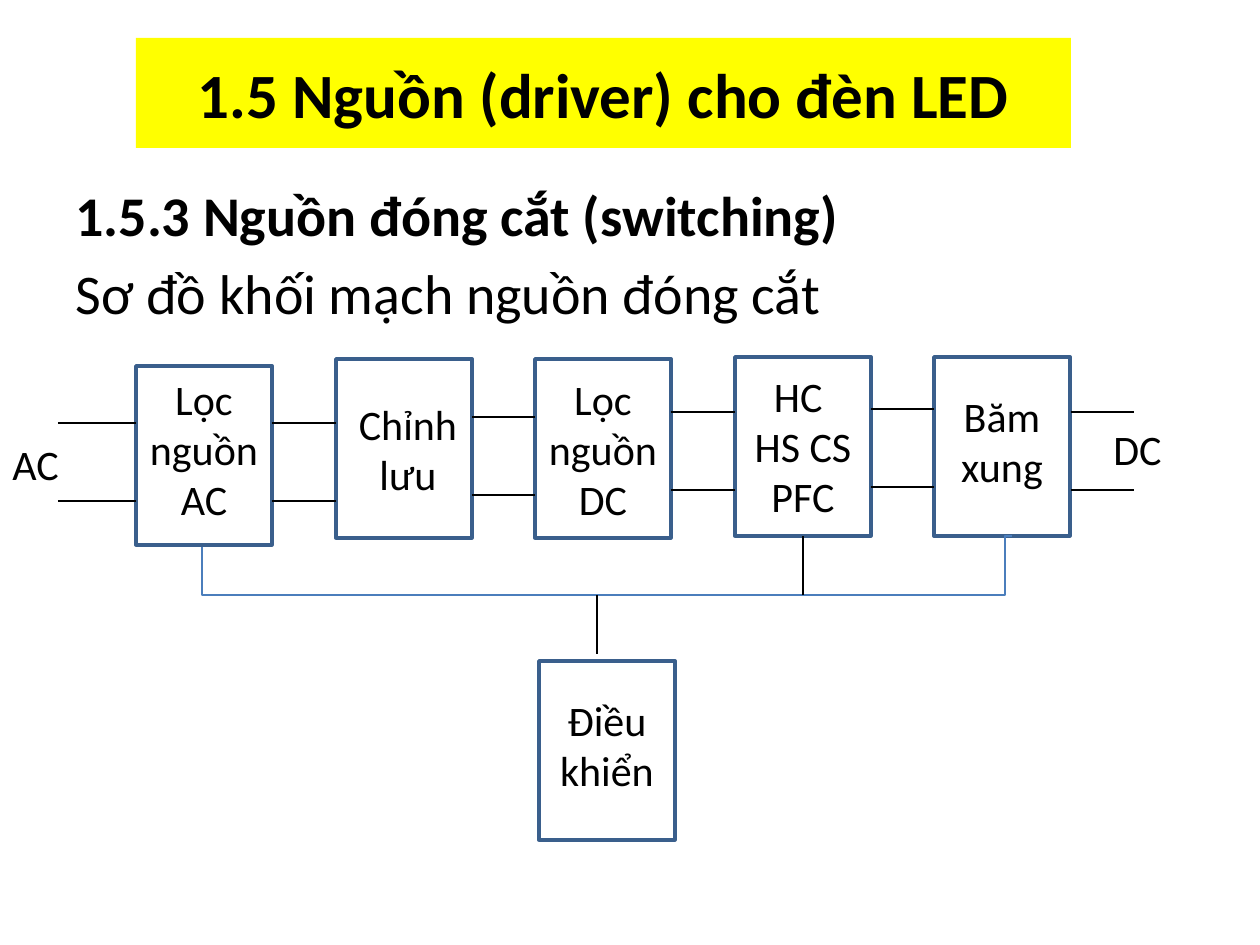
from typing import NamedTuple

from lxml.etree import SubElement
from pptx import Presentation
from pptx.dml.color import RGBColor
from pptx.enum.shapes import MSO_CONNECTOR as Connector, MSO_SHAPE as Shape
from pptx.enum.text import MSO_ANCHOR as Anchor, PP_ALIGN as Align
from pptx.oxml.ns import qn
from pptx.util import Emu, Inches, Pt

EMU_PER_PX = 914400 / 126
BLACK = RGBColor(0x00, 0x00, 0x00)
YELLOW = RGBColor(0xFF, 0xFF, 0x00)
BOX_BLUE = RGBColor(0x3A, 0x5F, 0x8C)
BUS_BLUE = RGBColor(0x4B, 0x7E, 0xBC)
FONT = "Calibri"

BLOCK_WIDTH, BLOCK_HEIGHT = 136, 179
FIRST_LEFT, BLOCK_PITCH = 136, 199.6
WIRE_GAP = 78
BUS_Y = 595


class Block(NamedTuple):
    lines: list[str]
    left: int
    top: int
    text_top: int
    text_height: int
    text_shift: int = 0


class WirePair(NamedTuple):
    left: int
    right: int
    top: int


def stage_left(index: int) -> int:
    return round(FIRST_LEFT + index * BLOCK_PITCH)


STAGES = [
    Block(["Lọc nguồn AC"], stage_left(0), 366, 367, 165),
    Block(["Chỉnh lưu"], stage_left(1), 359, 392, 115, text_shift=4),
    Block(["Lọc nguồn DC"], stage_left(2), 359, 367, 165),
    Block(["HC ", "HS CS", "PFC"], stage_left(3), 357, 364, 165),
    Block(["Băm xung"], stage_left(4), 357, 384, 115),
]
CONTROL = Block(["Điều khiển"], 539, 661, 688, 115)
GAP_WIRE_TOPS = [423, 417, 412, 409]


def px(value: float) -> Emu:
    return Emu(round(value * EMU_PER_PX))


def frame(left: int, top: int, width: int, height: int) -> list[Emu]:
    return [px(value) for value in (left, top, width, height)]


def write_text(shape, lines: list[str], *, size: int = 24, bold_lines: int = 0,
               align=Align.LEFT, anchor=Anchor.TOP, space_before: float = 0) -> None:
    """Fill the shape with one paragraph a line; the first bold_lines are bold."""
    text = shape.text_frame
    text.word_wrap = True
    text.vertical_anchor = anchor
    for index, line in enumerate(lines):
        para = text.paragraphs[0] if index == 0 else text.add_paragraph()
        para.alignment = align
        para.space_before = Pt(space_before)
        span = para.add_run()
        span.text = line
        span.font.name = FONT
        span.font.size = Pt(size)
        span.font.bold = index < bold_lines
        span.font.color.rgb = BLACK


def add_block(page, block: Block):
    label = page.shapes.add_textbox(*frame(
        block.left + block.text_shift, block.text_top, BLOCK_WIDTH, block.text_height))
    write_text(label, block.lines, align=Align.CENTER)
    box = page.shapes.add_shape(Shape.RECTANGLE, *frame(
        block.left, block.top, BLOCK_WIDTH, BLOCK_HEIGHT))
    box.shadow.inherit = False
    box.fill.background()
    box.line.color.rgb = BOX_BLUE
    box.line.width = Pt(2)
    return box


def add_wire(page, x1: int, y1: int, x2: int, y2: int):
    wire = page.shapes.add_connector(
        Connector.STRAIGHT, px(x1), px(y1), px(x2), px(y2))
    wire.line.color.rgb = BLACK
    wire.line.width = Pt(1.5)
    SubElement(wire._element.spPr, qn("a:effectLst"))
    return wire


def add_wire_pair(page, pair: WirePair) -> None:
    for y in (pair.top, pair.top + WIRE_GAP):
        add_wire(page, pair.left, y, pair.right, y)


def add_control_bus(page) -> None:
    builder = page.shapes.build_freeform(202, 547, scale=EMU_PER_PX)
    builder.add_line_segments(
        [(202, BUS_Y), (1005, BUS_Y), (1005, 536), (1012, 536)], close=False)
    bus = builder.convert_to_shape()
    bus.shadow.inherit = False
    bus.fill.background()
    bus.line.color.rgb = BUS_BLUE
    bus.line.width = Pt(0.75)


def add_headings(page) -> None:
    title = page.shapes.add_shape(Shape.RECTANGLE, *frame(136, 38, 935, 110))
    title.shadow.inherit = False
    title.fill.solid()
    title.fill.fore_color.rgb = YELLOW
    title.line.fill.background()
    write_text(title, ["1.5 Nguồn (driver) cho đèn LED"], size=36, bold_lines=1,
               align=Align.CENTER, anchor=Anchor.MIDDLE)
    body = page.shapes.add_textbox(*frame(63, 174, 1124, 151))
    write_text(body, ["1.5.3 Nguồn đóng cắt (switching)", "Sơ đồ khối mạch nguồn đóng cắt"],
               size=32, bold_lines=1, space_before=6.4)


def add_diagram(page) -> None:
    boxes = [add_block(page, stage) for stage in STAGES]
    add_block(page, CONTROL)

    pairs = [WirePair(58, FIRST_LEFT, 423), WirePair(1071, 1134, 412)]
    pairs += [WirePair(before.left + BLOCK_WIDTH, after.left, top)
              for before, after, top in zip(STAGES, STAGES[1:], GAP_WIRE_TOPS)]
    for pair in pairs:
        add_wire_pair(page, pair)

    for name, left, top in (("DC", 1101, 417), ("AC", 0, 432)):
        write_text(page.shapes.add_textbox(*frame(left, top, BLOCK_WIDTH, 63)), [name])

    add_control_bus(page)
    correction = STAGES[3]
    center = correction.left + BLOCK_WIDTH // 2
    riser = add_wire(page, center, BUS_Y, center, correction.top + BLOCK_HEIGHT)
    riser.end_connect(boxes[3], 2)
    add_wire(page, 597, 654, 597, BUS_Y)


def main() -> None:
    deck = Presentation()
    deck.slide_width, deck.slide_height = Inches(10), Inches(7.5)
    page = deck.slides.add_slide(deck.slide_layouts[6])
    add_headings(page)
    add_diagram(page)
    deck.save("out.pptx")


if __name__ == "__main__":
    main()
